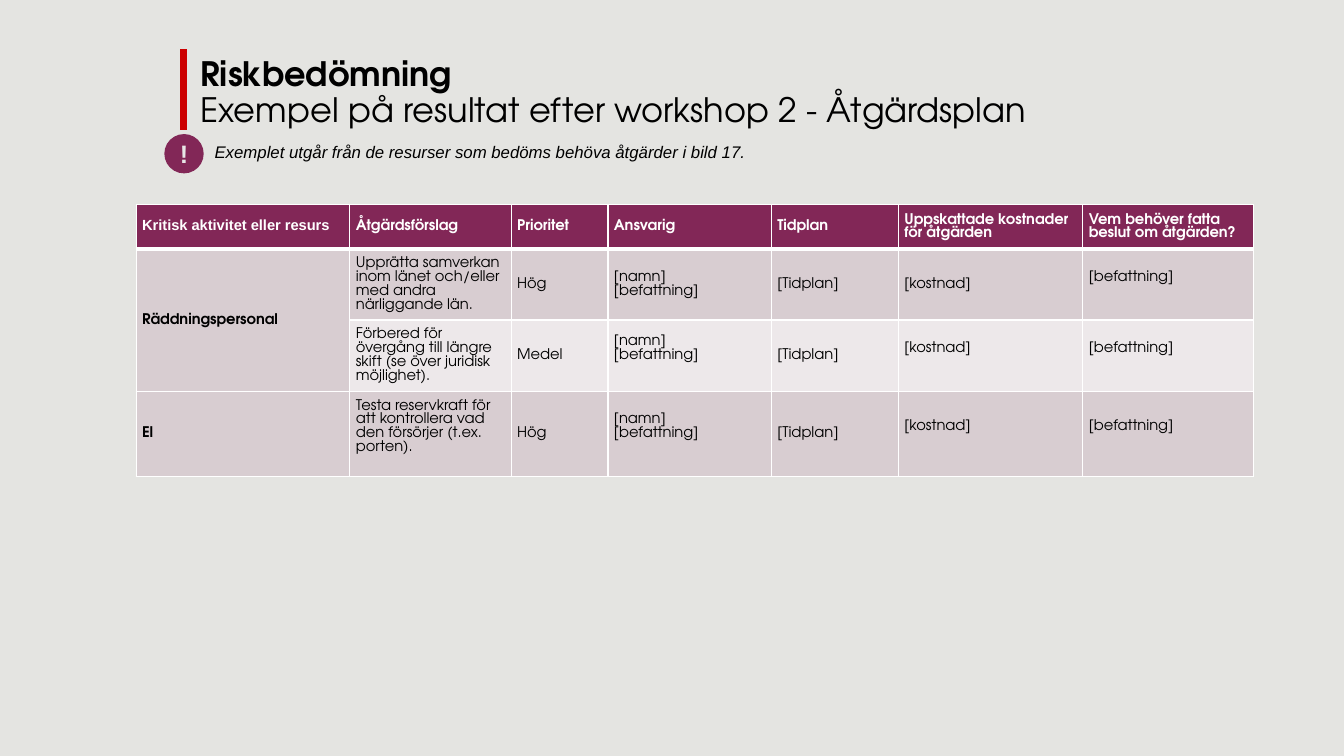
from lxml.etree import SubElement
from pptx import Presentation
from pptx.dml.color import RGBColor
from pptx.enum.shapes import MSO_CONNECTOR, MSO_SHAPE
from pptx.enum.text import MSO_ANCHOR, PP_ALIGN
from pptx.oxml.ns import qn
from pptx.util import Inches, Pt

COLORS = {
    "background": "E4E4E1", "plum": "822757", "red": "CC0000", "white": "FFFFFF",
    "black": "000000", "light": "E7E6E6", "band": "D8CDD1", "pale": "EDE8EA",
}
HEADING_FONT = "TeX Gyre Adventor"
BODY_FONT = "Arial"
COLUMN_WIDTHS = [2.12, 1.6, 0.96, 1.62, 1.26, 1.83, 1.69]
ROW_HEIGHTS = [0.44, 0.7, 0.7, 0.83]
ROW_FILLS = ["plum", "band", "pale", "band"]
CONTACT = "[namn]\n[befattning]"
PLAN = [
    ["Kritisk aktivitet eller resurs", "Åtgärdsförslag", "Prioritet", "Ansvarig", "Tidplan",
     "Uppskattade kostnader\vför åtgärden", "Vem behöver fatta\vbeslut om åtgärden?"],
    ["Räddningspersonal", "Upprätta samverkan inom länet och/eller med andra närliggande län.",
     "Hög", CONTACT, "[Tidplan]", "[kostnad]", "[befattning]"],
    ["", "Förbered för övergång till längre skift (se över juridisk möjlighet).",
     "Medel", CONTACT, "[Tidplan]", "[kostnad]", "[befattning]"],
    ["El", "Testa reservkraft för att kontrollera vad den försörjer (t.ex. porten).",
     "Hög", CONTACT, "[Tidplan]", "[kostnad]", "[befattning]"],
]
RAISED_CELLS = {(1, 6), (2, 3), (2, 5), (2, 6), (3, 1), (3, 3), (3, 5), (3, 6)}


def color(name):
    return RGBColor.from_string(COLORS[name])


def apply(target, values):
    for name, value in values.items():
        setattr(target, name, value)


class SlideBuilder:
    """Hold the style and the current slide, and draw its elements."""

    def __init__(self, presentation):
        self.slide = presentation.slides.add_slide(presentation.slide_layouts[6])
        background = self.slide.background.fill
        background.solid()
        background.fore_color.rgb = color("background")

    def style(self, font, size, name, color_name="black", bold=False, italic=False):
        apply(font, {"size": Pt(size), "name": name, "bold": bold, "italic": italic})
        font.color.rgb = color(color_name)

    def text(self, left, top, width, height, runs, **paragraph_format):
        box = self.slide.shapes.add_textbox(
            Inches(left), Inches(top), Inches(width), Inches(height))
        box.text_frame.word_wrap = True
        paragraph = box.text_frame.paragraphs[0]
        apply(paragraph, paragraph_format)
        for index, (words, font_format) in enumerate(runs):
            if index:
                paragraph.add_line_break()
            run = paragraph.add_run()
            run.text = words
            self.style(run.font, **font_format)

    def line(self, x, top, bottom, color_name, width):
        connector = self.slide.shapes.add_connector(
            MSO_CONNECTOR.STRAIGHT, Inches(x), Inches(top), Inches(x), Inches(bottom))
        connector.line.color.rgb = color(color_name)
        connector.line.width = Pt(width)
        SubElement(connector._element.spPr, qn("a:effectLst"))

    def badge(self, left, top, size, words):
        shape = self.slide.shapes.add_shape(
            MSO_SHAPE.OVAL, Inches(left), Inches(top), Inches(size), Inches(size))
        shape.shadow.inherit = False
        shape.fill.solid()
        shape.fill.fore_color.rgb = color("plum")
        shape.line.fill.background()
        frame = shape.text_frame
        apply(frame, {"margin_left": 0, "margin_right": 0, "margin_top": 0,
                      "margin_bottom": 0, "vertical_anchor": MSO_ANCHOR.MIDDLE})
        paragraph = frame.paragraphs[0]
        paragraph.alignment = PP_ALIGN.CENTER
        run = paragraph.add_run()
        run.text = words
        self.style(run.font, 18, BODY_FONT, "light", bold=True)

    def borders(self, cell, row):
        properties = cell._tc.get_or_add_tcPr()
        widths = {"lnL": 1, "lnR": 1, "lnT": 3 if row == 1 else 1, "lnB": 3 if row == 0 else 1}
        for index, (tag, width) in enumerate(widths.items()):
            border = properties.makeelement(qn(f"a:{tag}"), {"w": str(Pt(width))})
            fill = SubElement(border, qn("a:solidFill"))
            SubElement(fill, qn("a:srgbClr"), {"val": COLORS["white"]})
            properties.insert(index, border)

    def cell(self, cell, row, column, words):
        header = row == 0
        margin = 0.04 if header else 0.08
        raise_by = 0.14 if (row, column) in RAISED_CELLS else 0
        apply(cell, {
            "vertical_anchor": MSO_ANCHOR.MIDDLE,
            "margin_left": Inches(0.06), "margin_right": Inches(0 if header else 0.06),
            "margin_top": Inches(margin), "margin_bottom": Inches(margin + raise_by),
        })
        cell.fill.solid()
        cell.fill.fore_color.rgb = color(ROW_FILLS[row])
        self.borders(cell, row)
        cell.text_frame.text = words
        for paragraph in cell.text_frame.paragraphs:
            paragraph.line_spacing = Pt(9.8)
            for run in paragraph.runs:
                self.style(run.font, 10.5, BODY_FONT if header and column == 0 else HEADING_FONT,
                           "white" if header else "black", bold=header or column == 0)

    def table(self, left, top, rows):
        frame = self.slide.shapes.add_table(
            len(rows), len(COLUMN_WIDTHS), Inches(left), Inches(top),
            Inches(sum(COLUMN_WIDTHS)), Inches(sum(ROW_HEIGHTS)))
        table = frame.table
        for table_column, width in zip(table.columns, COLUMN_WIDTHS):
            table_column.width = Inches(width)
        for table_row, height in zip(table.rows, ROW_HEIGHTS):
            table_row.height = Inches(height)
        for row, texts in enumerate(rows):
            for column, words in enumerate(texts):
                self.cell(table.cell(row, column), row, column, words)
        table.cell(1, 0).merge(table.cell(2, 0))


def main():
    presentation = Presentation()
    apply(presentation, {"slide_width": Inches(13.33), "slide_height": Inches(7.5)})
    builder = SlideBuilder(presentation)
    builder.table(1.35, 2.03, PLAN)
    title_font = {"size": 24, "name": HEADING_FONT}
    builder.text(1.89, 0.52, 9.83, 0.8, [
        ("Riskbedömning", {**title_font, "bold": True}),
        ("Exempel på resultat efter workshop 2 - Åtgärdsplan", title_font),
    ], line_spacing=0.9)
    builder.line(1.82, 0.49, 1.29, "red", 5)
    builder.text(2.03, 1.36, 7.17, 0.3, [
        ("Exemplet utgår från de resurser som bedöms behöva åtgärder i bild 17.",
         {"size": 12, "name": BODY_FONT, "italic": True}),
    ], space_after=Pt(12))
    builder.badge(1.63, 1.33, 0.39, "!")
    presentation.save("out.pptx")


if __name__ == "__main__":
    main()
